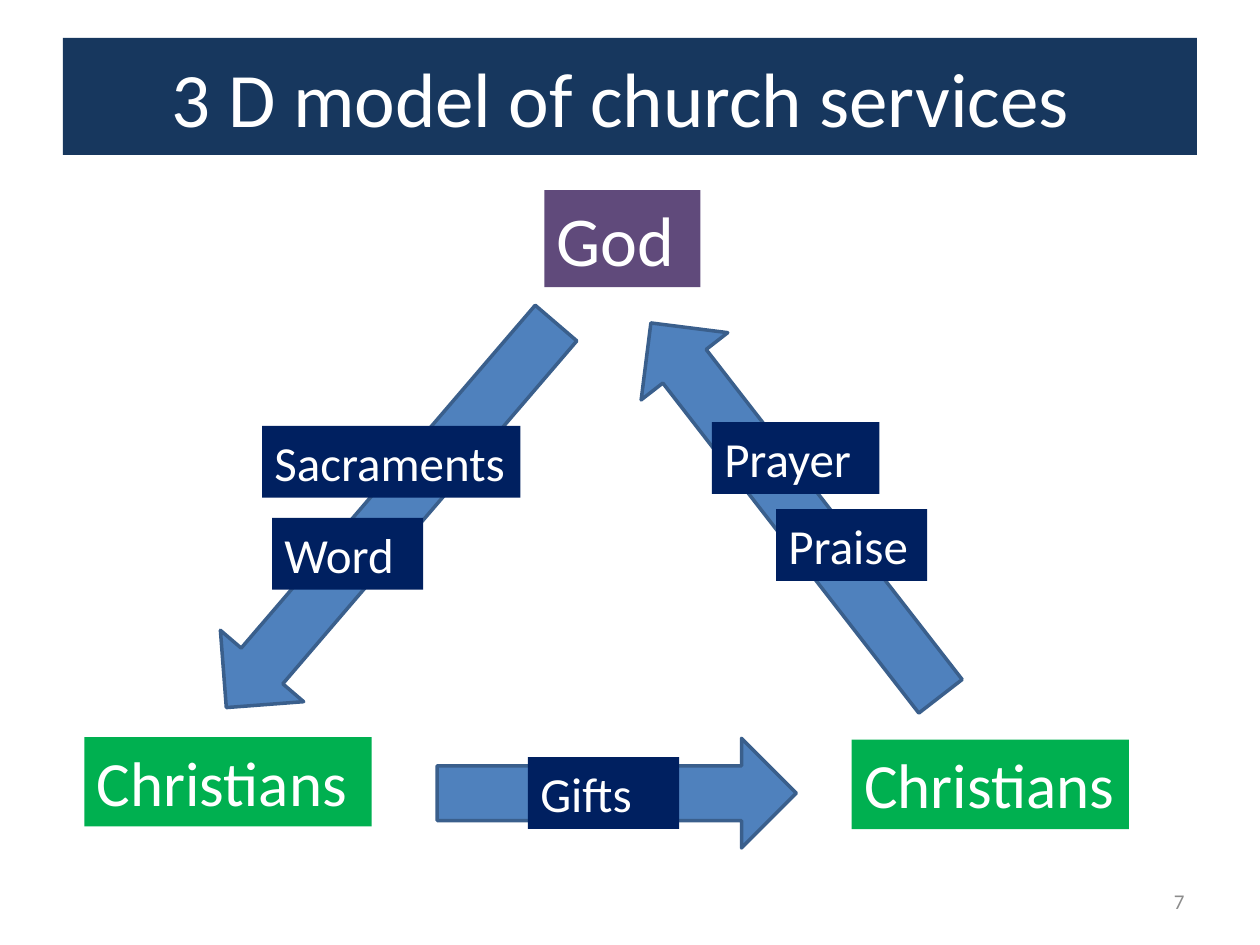
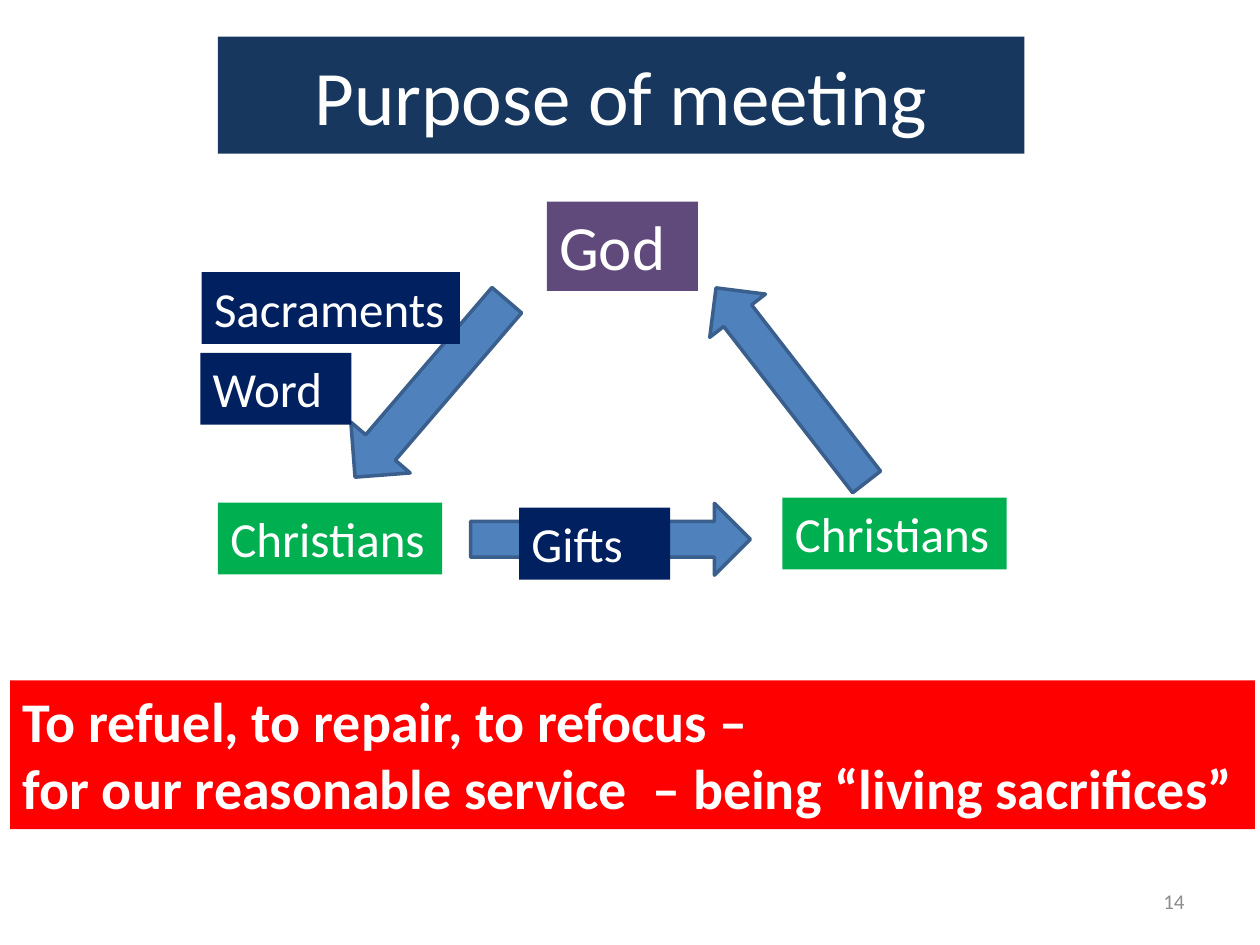
from dataclasses import dataclass

from pptx import Presentation
from pptx.dml.color import RGBColor
from pptx.enum.shapes import MSO_SHAPE as Shape
from pptx.enum.text import MSO_ANCHOR as Anchor, PP_ALIGN as Align
from pptx.util import Emu, Pt

EMU_PER_PX = 9144  # 100 px to the inch


@dataclass(frozen=True)
class Theme:
    font: str = "Calibri"
    # Colours
    title_band: str = "17375E"
    god: str = "604A7B"
    christians: str = "00B050"
    label: str = "002060"
    banner: str = "FF0000"
    arrow: str = "4F81BD"
    arrow_line: str = "3A5F8C"
    light: str = "FFFFFF"
    number: str = "8C8C8C"
    # Type sizes and line width in points
    title_size: int = 44
    banner_size: int = 32
    label_size: int = 28
    number_size: int = 12
    arrow_line_width: int = 2


THEME = Theme()
LABEL_HEIGHT = 57
LABEL_WIDTH = 120


def px(*lengths):
    return [Emu(length * EMU_PER_PX) for length in lengths]


def write_text(shape, text, size, color=THEME.light, bold=False,
               align=Align.LEFT, anchor=Anchor.TOP):
    """Write each line of the text as one paragraph."""
    frame = shape.text_frame
    frame.word_wrap = True
    frame.vertical_anchor = anchor
    for index, line in enumerate(text.splitlines()):
        paragraph = frame.add_paragraph() if index else frame.paragraphs[0]
        paragraph.alignment = align
        run = paragraph.add_run()
        run.text = line
        run.font.name = THEME.font
        run.font.size = Pt(size)
        run.font.bold = bold
        run.font.color.rgb = RGBColor.from_string(color)


def add_filled_shape(slide, kind, box, fill):
    shape = slide.shapes.add_shape(kind, *px(*box))
    shape.shadow.inherit = False
    shape.fill.solid()
    shape.fill.fore_color.rgb = RGBColor.from_string(fill)
    shape.line.fill.background()
    return shape


def add_box(slide, text, box, fill, size, **text_format):
    shape = add_filled_shape(slide, Shape.RECTANGLE, box, fill)
    write_text(shape, text, size, **text_format)


def add_label(slide, text, left, top, width=LABEL_WIDTH):
    add_box(slide, text, (left, top, width, LABEL_HEIGHT),
            THEME.label, THEME.label_size)


def add_arrow(slide, box, rotation):
    arrow = add_filled_shape(slide, Shape.DOWN_ARROW, box, THEME.arrow)
    arrow.rotation = rotation
    arrow.line.color.rgb = RGBColor.from_string(THEME.arrow_line)
    arrow.line.width = Pt(THEME.arrow_line_width)


def add_triangle(slide, to_christians, to_god, between_christians):
    """Add the three arrows that link God and the Christians."""
    add_arrow(slide, to_christians, 40.6)
    add_arrow(slide, to_god, 142.2)
    add_arrow(slide, between_christians, 270)


def start_slide(presentation, title, title_box, number):
    """Add a blank slide with its title band and slide number."""
    slide = presentation.slides.add_slide(presentation.slide_layouts[6])
    add_box(slide, title, title_box, THEME.title_band, THEME.title_size,
            align=Align.CENTER, anchor=Anchor.MIDDLE)
    number_box = slide.shapes.add_textbox(*px(717, 695, 233, 40))
    write_text(number_box, str(number), THEME.number_size, color=THEME.number,
               align=Align.RIGHT, anchor=Anchor.MIDDLE)
    return slide


def build_model_slide(presentation):
    slide = start_slide(presentation, "3 D model of church services ",
                        (50, 30, 900, 93), 7)
    add_triangle(slide, (267, 208, 87, 402), (588, 217, 87, 375),
                 (446, 487, 87, 285))
    # Corners of the triangle
    add_box(slide, "God", (432, 151, 124, 77), THEME.god, 40)
    add_box(slide, "Christians", (67, 585, 228, 71), THEME.christians, 36)
    add_box(slide, "Christians", (676, 587, 220, 71), THEME.christians, 36)
    # Labels on the arrows
    add_label(slide, "Sacraments", 208, 338, width=205)
    add_label(slide, "Word", 216, 411)
    add_label(slide, "Gifts", 419, 601)
    add_label(slide, "Prayer", 565, 335, width=133)
    add_label(slide, "Praise", 616, 404)


def build_purpose_slide(presentation):
    slide = start_slide(presentation, "Purpose of meeting",
                        (173, 29, 640, 93), 14)
    add_triangle(slide, (311, 216, 62, 185), (600, 208, 56, 195),
                 (456, 317, 57, 222))
    # Corners of the triangle
    add_box(slide, "God", (434, 160, 120, 71), THEME.god, 36)
    for left, top in ((621, 395), (173, 399)):
        add_box(slide, "Christians", (left, top, 178, LABEL_HEIGHT),
                THEME.christians, THEME.label_size)
    # Closing statement
    add_box(slide,
            "To refuel, to repair, to refocus –\n"
            "for our reasonable service \t– being “living sacrifices”",
            (8, 540, 988, 118), THEME.banner, THEME.banner_size, bold=True)
    # Labels on the arrows
    add_label(slide, "Sacraments", 160, 216, width=205)
    add_label(slide, "Word", 159, 280)
    add_label(slide, "Gifts", 412, 403)


def main():
    presentation = Presentation()
    presentation.slide_width, presentation.slide_height = px(1000, 750)
    build_model_slide(presentation)
    build_purpose_slide(presentation)
    presentation.save("out.pptx")


if __name__ == "__main__":
    main()
